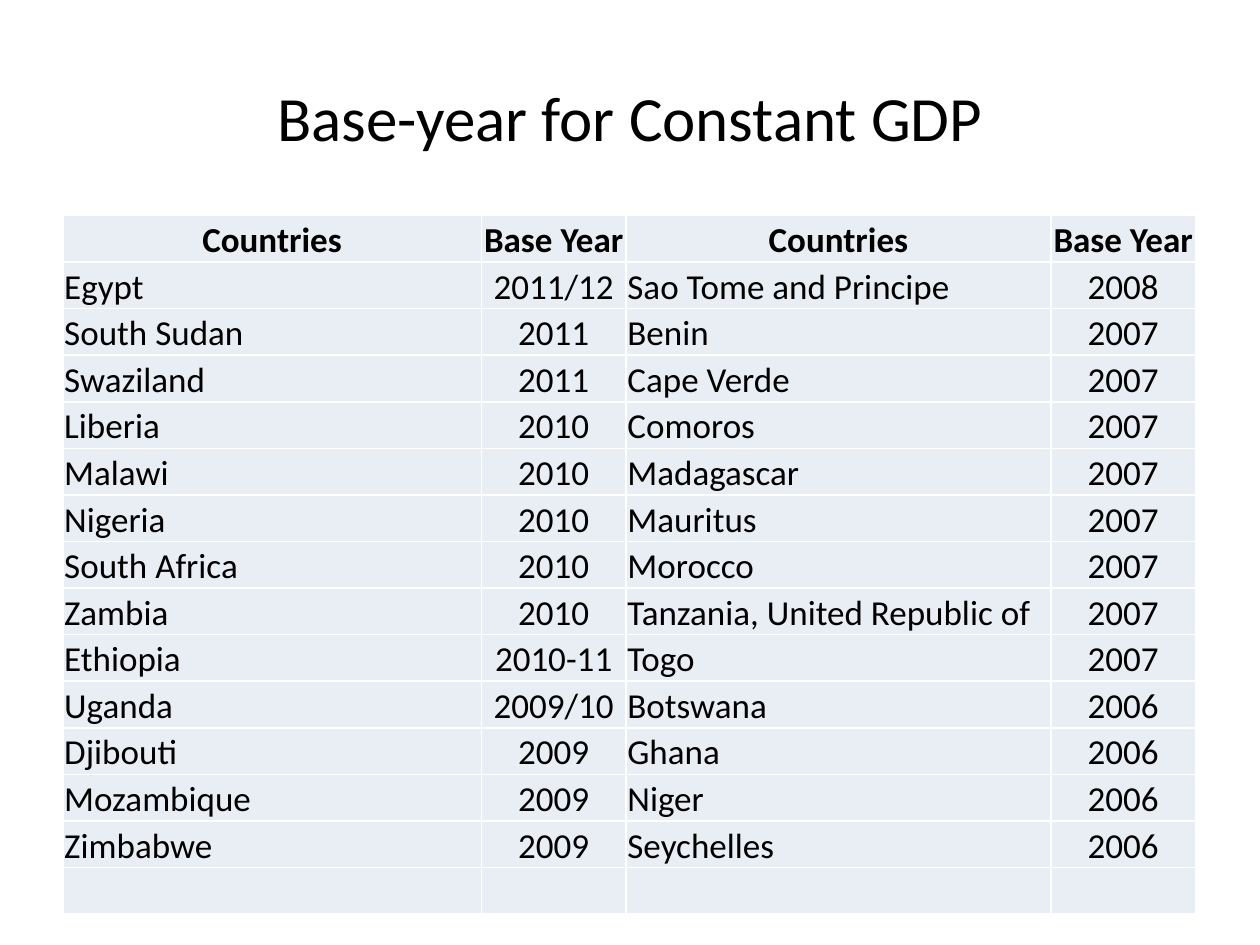
from lxml.etree import SubElement
from pptx import Presentation
from pptx.dml.color import RGBColor
from pptx.enum.text import MSO_ANCHOR, PP_ALIGN
from pptx.oxml.ns import qn
from pptx.util import Inches, Pt

WIDTH, HEIGHT = 10, 7.5
MARGIN = 0.05 * WIDTH
TABLE_TOP, ROW_HEIGHT = 1.71, 0.37
COLUMN_WIDTHS = [3.32, 1.15, 3.37, 1.15]
BLACK, WHITE, PALE_BLUE = "000000", "FFFFFF", "E9EDF4"
CELL_FORMAT = {
    "margin_left": Inches(0.01),
    "margin_right": Inches(0.01),
    "margin_top": Inches(0.01),
    "margin_bottom": 0,
    "vertical_anchor": MSO_ANCHOR.BOTTOM,
}

HEADER = ["Countries", "Base Year"] * 2
BASE_YEARS = [
    ("Egypt", "2011/12", "Sao Tome and Principe", "2008"),
    ("South Sudan", "2011", "Benin", "2007"),
    ("Swaziland", "2011", "Cape Verde", "2007"),
    ("Liberia", "2010", "Comoros", "2007"),
    ("Malawi", "2010", "Madagascar", "2007"),
    ("Nigeria", "2010", "Mauritus", "2007"),
    ("South Africa", "2010", "Morocco", "2007"),
    ("Zambia", "2010", "Tanzania, United Republic of", "2007"),
    ("Ethiopia", "2010-11", "Togo", "2007"),
    ("Uganda", "2009/10", "Botswana", "2006"),
    ("Djibouti", "2009", "Ghana", "2006"),
    ("Mozambique", "2009", "Niger", "2006"),
    ("Zimbabwe", "2009", "Seychelles", "2006"),
    ("", "", "", ""),
]


def color(value):
    return RGBColor.from_string(value)


def set_attributes(target, values):
    for name, value in values.items():
        setattr(target, name, value)


def write_text(paragraph, text, size, bold=False, align=PP_ALIGN.CENTER):
    paragraph.alignment = align
    run = paragraph.add_run()
    run.text = text
    set_attributes(run.font, {"name": "Calibri", "size": Pt(size), "bold": bold})
    run.font.color.rgb = color(BLACK)


def add_title(slide, text):
    title = slide.shapes.title
    set_attributes(title, {
        "left": Inches(MARGIN),
        "top": Inches(0.04 * HEIGHT),
        "width": Inches(WIDTH - 2 * MARGIN),
        "height": Inches(HEIGHT / 6),
    })
    title.text_frame.vertical_anchor = MSO_ANCHOR.MIDDLE
    write_text(title.text_frame.paragraphs[0], text, 36)


def add_borders(cell):
    # Borders must come before the fill in the cell properties
    properties = cell._tc.get_or_add_tcPr()
    for side in ("a:lnL", "a:lnR", "a:lnT", "a:lnB"):
        line = SubElement(properties, qn(side), w=str(Pt(1)))
        fill = SubElement(line, qn("a:solidFill"))
        SubElement(fill, qn("a:srgbClr"), val=WHITE)


def format_cell(cell):
    set_attributes(cell, CELL_FORMAT)
    add_borders(cell)
    cell.fill.solid()
    cell.fill.fore_color.rgb = color(PALE_BLUE)


def add_base_year_table(slide):
    rows = [HEADER, *BASE_YEARS]
    table = slide.shapes.add_table(
        len(rows), len(COLUMN_WIDTHS), Inches(MARGIN), Inches(TABLE_TOP),
        Inches(sum(COLUMN_WIDTHS)), Inches(ROW_HEIGHT * len(rows))).table
    for column, width in zip(table.columns, COLUMN_WIDTHS):
        column.width = Inches(width)
    for row_index, row in enumerate(rows):
        table.rows[row_index].height = Inches(ROW_HEIGHT)
        is_header = row_index == 0
        for column_index, text in enumerate(row):
            cell = table.cell(row_index, column_index)
            format_cell(cell)
            # Country names are left-aligned, headings and years centred
            is_country = column_index % 2 == 0 and not is_header
            align = PP_ALIGN.LEFT if is_country else PP_ALIGN.CENTER
            if text:
                write_text(cell.text_frame.paragraphs[0], text, 20, is_header, align)


def main():
    presentation = Presentation()
    presentation.slide_width = Inches(WIDTH)
    presentation.slide_height = Inches(HEIGHT)
    slide = presentation.slides.add_slide(presentation.slide_layouts[5])
    add_title(slide, "Base-year for Constant GDP")
    add_base_year_table(slide)
    presentation.save("out.pptx")


if __name__ == "__main__":
    main()
